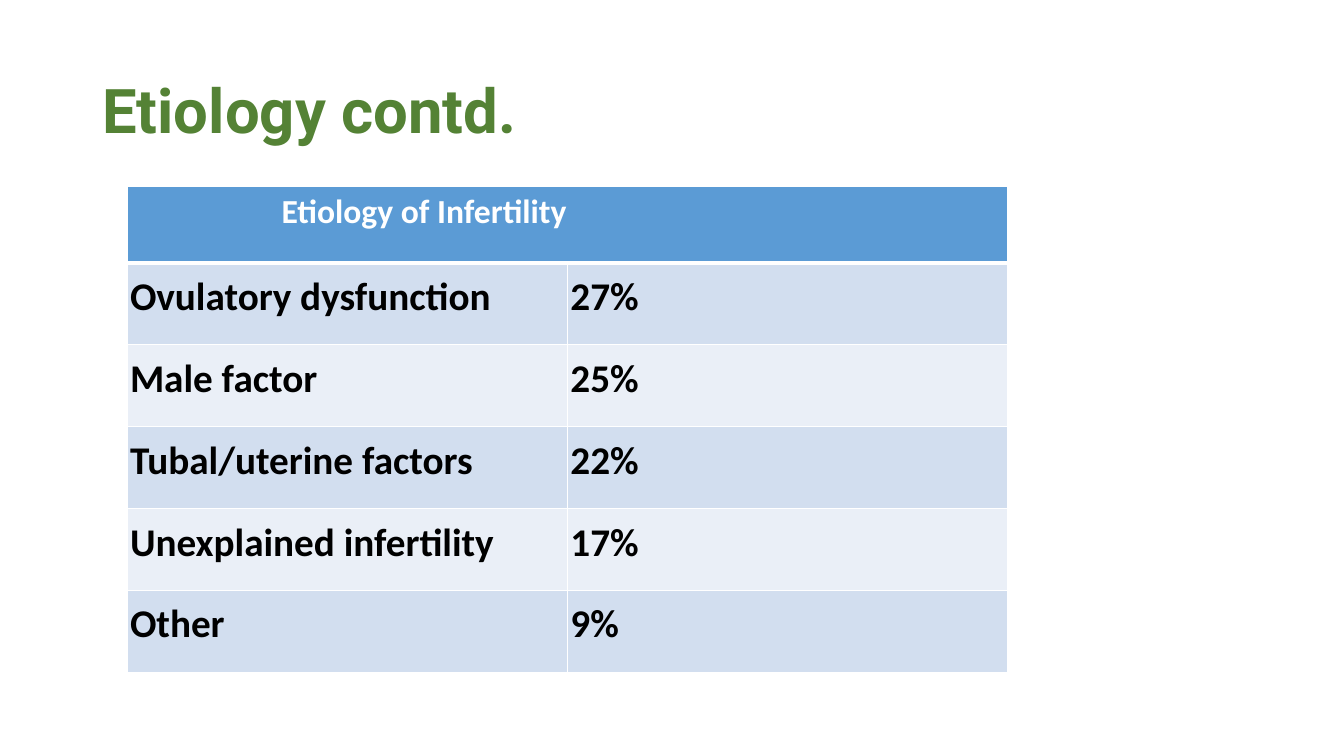
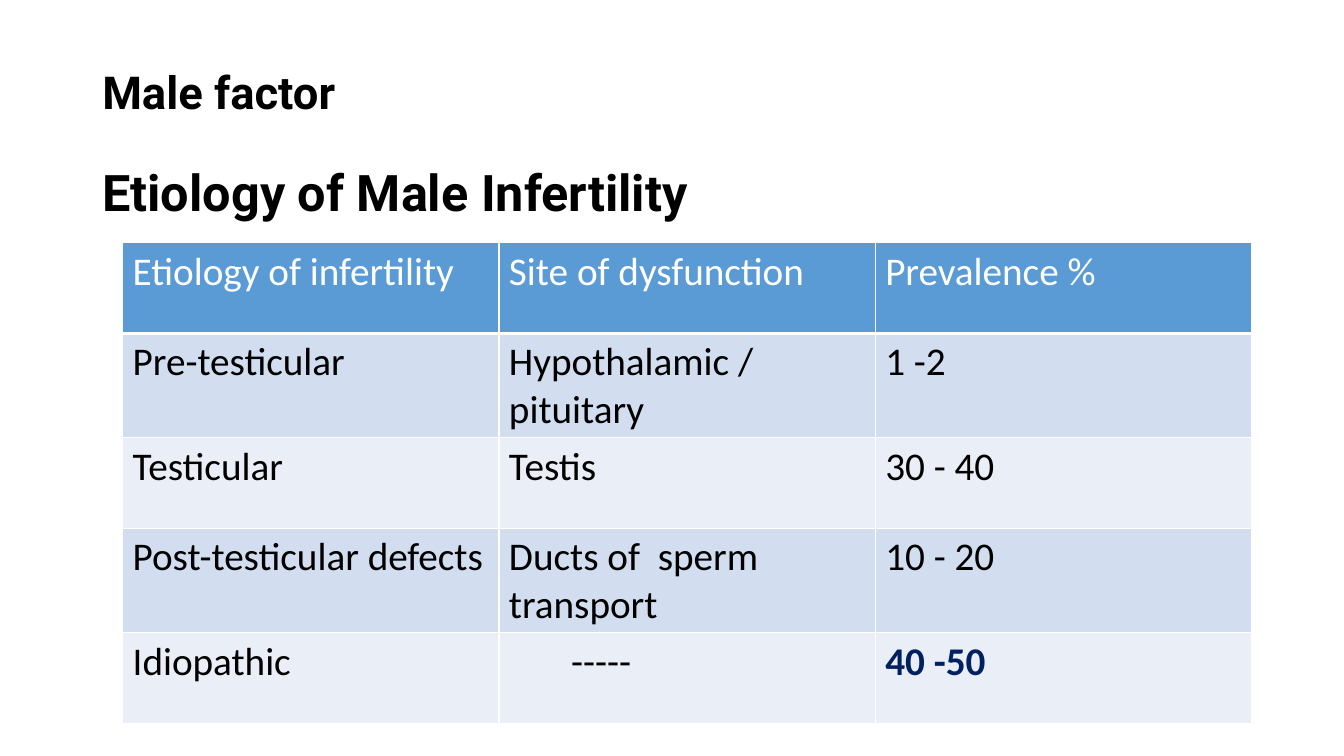
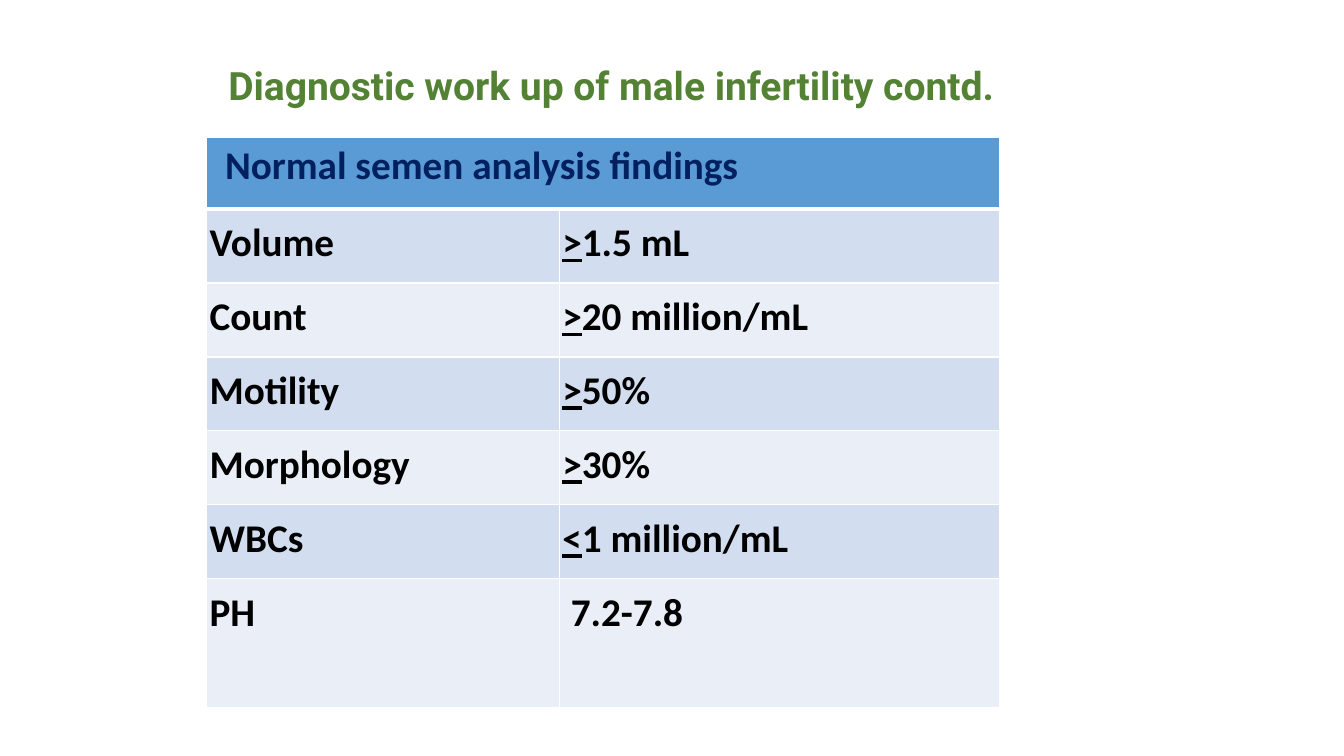
from dataclasses import dataclass
from typing import Any

from pptx import Presentation
from pptx.dml.color import RGBColor
from pptx.enum.text import MSO_ANCHOR
from pptx.oxml import parse_xml
from pptx.oxml.ns import nsdecls
from pptx.util import Emu, Inches, Pt

GRID_COLUMNS = 160
SLIDE_WIDTH = Inches(40 / 3)
SLIDE_HEIGHT = Inches(7.5)


@dataclass(frozen=True)
class Theme:
    title_font: str = "Roboto"
    body_font: str = "Calibri"
    green: str = "548235"
    black: str = "000000"
    white: str = "FFFFFF"
    navy: str = "002060"
    header_fill: str = "5B9BD5"
    bands: tuple[str, str] = ("D2DEEF", "EAEFF7")
    title_size: float = 44
    heading_size: float = 36
    subheading_size: float = 32.4
    small_title_size: float = 27.9
    body_size: float = 28
    small_header_size: float = 24
    thin_line: float = 1
    thick_line: float = 3


THEME = Theme()


@dataclass(frozen=True)
class Box:
    left: float
    top: float
    width: float
    height: float


@dataclass(frozen=True)
class TitleLine:
    text: str
    size: float
    color: str
    space_before: float = 0


@dataclass(frozen=True)
class CellText:
    text: str
    underlined: str = ""
    indent: float = 0
    color: str = THEME.black
    bold: bool = True


@dataclass(frozen=True)
class CellStyle:
    margin_x: float = 1.2
    margin_y: float = 0.6
    line_spacing: float = 1.0
    space_after: float = 0


@dataclass(frozen=True)
class TableSpec:
    left: float
    top: float
    columns: list[float]
    rows: list[float]
    header: list[CellText]
    body: list[list[CellText]]
    header_size: float = THEME.body_size
    body_style: CellStyle = CellStyle()


@dataclass(frozen=True)
class SlideSpec:
    title_box: Box
    title: list[TitleLine]
    table: TableSpec


ROOMY = CellStyle()
TIGHT = CellStyle(margin_x=0.36, margin_y=0.36, line_spacing=1.15, space_after=10)


def units(count: float) -> Emu:
    return Emu(round(count * SLIDE_WIDTH / GRID_COLUMNS))


def apply_format(target: Any, values: dict[str, Any]) -> None:
    for name, value in values.items():
        setattr(target, name, value)


def add_run(paragraph: Any, text: str, color: str, **values: Any) -> None:
    run = paragraph.add_run()
    run.text = text
    apply_format(run.font, values)
    run.font.color.rgb = RGBColor.from_string(color)


def add_title(slide: Any, box: Box, lines: list[TitleLine]) -> None:
    shape = slide.shapes.add_textbox(
        units(box.left), units(box.top), units(box.width), units(box.height)
    )
    frame = shape.text_frame
    apply_format(frame, {"word_wrap": True, "vertical_anchor": MSO_ANCHOR.MIDDLE})
    for index, line in enumerate(lines):
        paragraph = frame.add_paragraph() if index else frame.paragraphs[0]
        apply_format(
            paragraph, {"line_spacing": 0.9, "space_before": Pt(line.space_before)}
        )
        add_run(paragraph, line.text, line.color, name=THEME.title_font,
                size=Pt(line.size), bold=True)


def add_borders(cell: Any, bottom: float) -> None:
    properties = cell._tc.get_or_add_tcPr()
    widths = {"L": THEME.thin_line, "R": THEME.thin_line,
              "T": THEME.thin_line, "B": bottom}
    for side, width in widths.items():
        properties.append(parse_xml(
            f'<a:ln{side} {nsdecls("a")} w="{Pt(width)}"><a:solidFill>'
            f'<a:srgbClr val="{THEME.white}"/></a:solidFill></a:ln{side}>'
        ))


def paint_cell(cell: Any, fill: str, bottom: float) -> None:
    add_borders(cell, bottom)
    cell.fill.solid()
    cell.fill.fore_color.rgb = RGBColor.from_string(fill)


def write_cell(cell: Any, content: CellText, size: float, style: CellStyle) -> None:
    apply_format(cell, {
        "margin_left": units(style.margin_x), "margin_right": units(style.margin_x),
        "margin_top": units(style.margin_y), "margin_bottom": units(style.margin_y),
    })
    paragraph = cell.text_frame.paragraphs[0]
    apply_format(paragraph, {
        "line_spacing": style.line_spacing, "space_after": Pt(style.space_after),
    })
    if content.indent:
        paragraph._p.get_or_add_pPr().set("marL", str(units(content.indent)))
    for text, underline in ((content.underlined, True), (content.text, False)):
        if text:
            add_run(paragraph, text, content.color, name=THEME.body_font,
                    size=Pt(size), bold=content.bold, underline=underline)


def add_table(slide: Any, spec: TableSpec) -> None:
    table = slide.shapes.add_table(
        len(spec.rows), len(spec.columns), units(spec.left), units(spec.top),
        units(sum(spec.columns)), units(sum(spec.rows)),
    ).table
    for column, width in zip(table.columns, spec.columns):
        column.width = units(width)
    for row, height in zip(table.rows, spec.rows):
        row.height = units(height)
    for row_index, row in enumerate(table.rows):
        is_header = row_index == 0
        fill = THEME.header_fill if is_header else THEME.bands[(row_index - 1) % 2]
        for cell in row.cells:
            paint_cell(cell, fill, THEME.thick_line if is_header else THEME.thin_line)
    if len(spec.header) == 1:
        table.cell(0, 0).merge(table.cell(0, len(spec.columns) - 1))
    for row_index, contents in enumerate([spec.header, *spec.body]):
        size, style = (
            (THEME.body_size, spec.body_style) if row_index
            else (spec.header_size, ROOMY)
        )
        for column_index, content in enumerate(contents):
            write_cell(table.cell(row_index, column_index), content, size, style)


def plain(*texts: str, color: str = THEME.black) -> list[CellText]:
    return [CellText(text, color=color, bold=False) for text in texts]


def bold(*texts: str) -> list[CellText]:
    return [CellText(text) for text in texts]


def limit(name: str, sign: str, value: str) -> list[CellText]:
    return [CellText(name), CellText(value, underlined=sign)]


ETIOLOGY = SlideSpec(
    Box(11, 4.8, 138, 17.4),
    [TitleLine("Etiology contd.", THEME.title_size, THEME.green)],
    TableSpec(
        15.12, 22.2, [52.44] * 2, [9.1] + [9.75] * 5,
        [CellText("Etiology of Infertility", indent=17.2, color=THEME.white)],
        [
            bold("Ovulatory dysfunction", "27%"),
            bold("Male factor", "25%"),
            bold("Tubal/uterine factors", "22%"),
            bold("Unexplained infertility", "17%"),
            bold("Other", "9%"),
        ],
        header_size=THEME.small_header_size,
        body_style=TIGHT,
    ),
)

MALE_FACTOR = SlideSpec(
    Box(11, 4.8, 138, 25.2),
    [
        TitleLine("Male factor", THEME.subheading_size, THEME.black),
        TitleLine("Etiology of Male Infertility", THEME.heading_size, THEME.black, 35),
    ],
    TableSpec(
        14.6, 28.9, [44.8] * 3, [10.8] * 5,
        plain("Etiology of infertility", "Site of dysfunction", "Prevalence %",
              color=THEME.white),
        [
            plain("Pre-testicular", "Hypothalamic / pituitary", "1 -2"),
            plain("Testicular", "Testis", "30 - 40"),
            plain("Post-testicular defects", "Ducts of  sperm transport", "10 - 20"),
            [
                *plain("Idiopathic"),
                CellText("-----", indent=7.4, bold=False),
                CellText("40 -50", color=THEME.navy),
            ],
        ],
    ),
)

DIAGNOSTIC = SlideSpec(
    Box(26, 3.6, 108, 13.7),
    [TitleLine("Diagnostic work up of male infertility contd.",
               THEME.small_title_size, THEME.green)],
    TableSpec(
        24.6, 16.3, [42, 52.4], [8.6] + [8.8] * 5 + [15.3],
        [CellText("Normal semen analysis findings", indent=1, color=THEME.navy)],
        [
            limit("Volume", ">", "1.5 mL"),
            limit("Count", ">", "20 million/mL"),
            limit("Motility", ">", "50%"),
            limit("Morphology", ">", "30%"),
            limit("WBCs", "<", "1 million/mL"),
            [CellText("PH"), CellText("7.2-7.8", indent=1)],
        ],
        body_style=TIGHT,
    ),
)


def main() -> None:
    presentation = Presentation()
    apply_format(
        presentation, {"slide_width": SLIDE_WIDTH, "slide_height": SLIDE_HEIGHT}
    )
    for spec in (ETIOLOGY, MALE_FACTOR, DIAGNOSTIC):
        slide = presentation.slides.add_slide(presentation.slide_layouts[6])
        add_table(slide, spec.table)
        add_title(slide, spec.title_box, spec.title)
    presentation.save("out.pptx")


if __name__ == "__main__":
    main()
